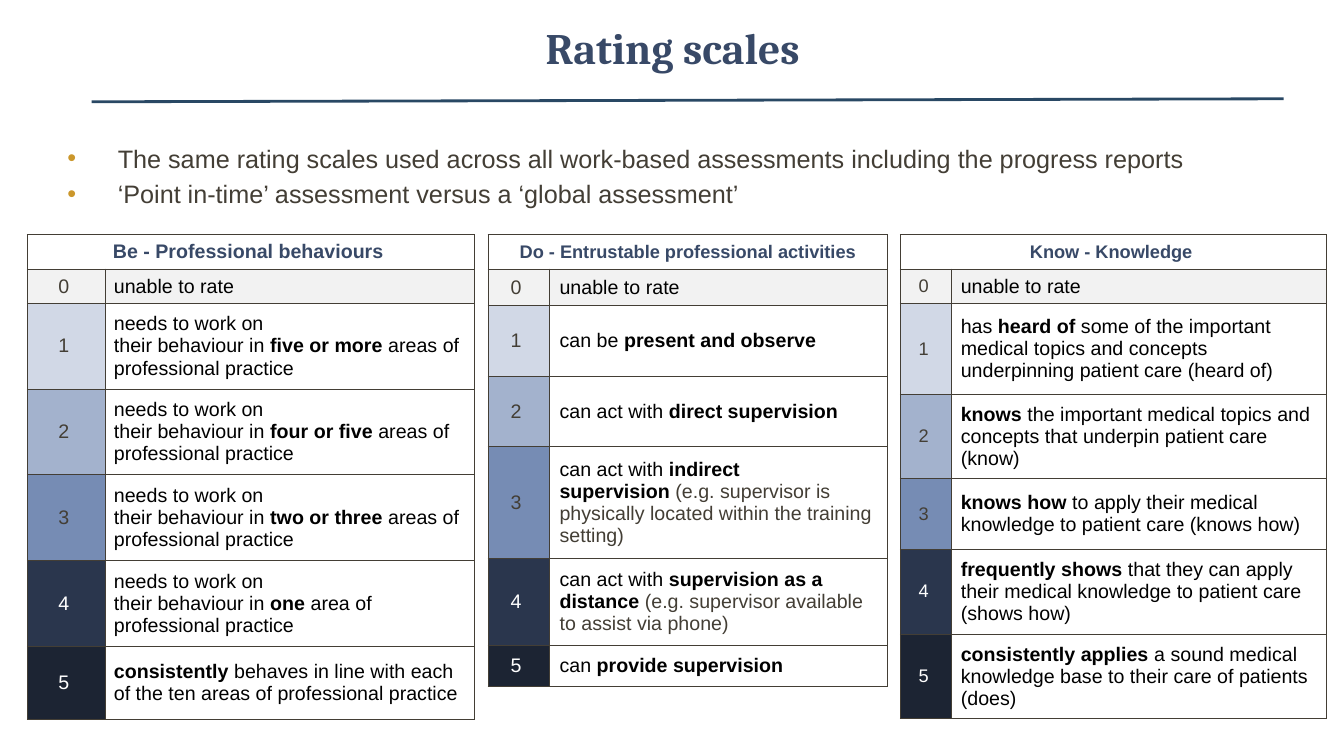
from lxml.etree import SubElement
from pptx import Presentation
from pptx.dml.color import RGBColor
from pptx.enum.shapes import MSO_CONNECTOR
from pptx.enum.text import MSO_ANCHOR, PP_ALIGN
from pptx.oxml.ns import qn
from pptx.util import Inches, Pt

COLORS = {
    "heading": "384967", "rule": "294864", "muted": "433E35", "bullet": "CB972B",
    "black": "000000", "white": "FFFFFF",
}
# Fill of each rating, 0 to 5
RATING_FILLS = ["F2F2F2", "D1D8E6", "A3B2CD", "768CB4", "2A364D", "1C2433"]
NO_BREAK = chr(160)

BULLETS = [
    "The same rating scales used across all work-based assessments including the progress reports",
    "‘Point in-time’ assessment versus a ‘global assessment’",
]

# Descriptions read "lead|bold|tail"; "_" is a no-break space
BEHAVIOUR = "needs to work on their_behaviour_in_|{}_|{} of professional practice_"
SCALES = [
    {
        "heading": "Be - Professional behaviours_", "heading_size": 14, "digit_size": 14,
        "left": 0.27, "columns": [0.78, 3.66], "margins": (0.08, 0.04), "tail": "black",
        "rows": [0.34, 0.34, 0.85, 0.85, 0.85, 0.85, 0.73],
        "ratings": [
            "unable to rate_",
            BEHAVIOUR.format("five_or more", "areas"),
            BEHAVIOUR.format("four_or five", "areas"),
            BEHAVIOUR.format("two_or three", "areas"),
            BEHAVIOUR.format("one", "area"),
            "|consistently_|behaves in line with each of_the ten areas of professional practice_",
        ],
    },
    {
        "heading": "Know - Knowledge_", "heading_size": 13, "digit_size": 13,
        "left": 8.93, "columns": [0.51, 3.72], "margins": (0.09, 0.04), "tail": "black",
        "rows": [0.34, 0.34, 0.9, 0.84, 0.7, 0.84, 0.84],
        "ratings": [
            "unable to rate_",
            "has_|heard of_|some of the important medical topics_and concepts "
            "underpinning patient care (heard of)_",
            "|knows_|the important medical topics and concepts_that underpin patient care (know)_",
            "|knows how_|to apply their medical knowledge to_patient care (knows how)_",
            "|frequently shows|_that they can apply their medical_knowledge to patient care "
            "(shows how)_",
            "|consistently applies|_a sound medical knowledge_base to their care of patients "
            "(does)_",
        ],
    },
    {
        "heading": "Do - Entrustable_professional activities", "heading_size": 13,
        "digit_size": 14,
        "left": 4.84, "columns": [0.61, 3.35], "margins": (0.1, 0.05), "tail": "muted",
        "rows": [0.34, 0.36, 0.7, 0.7, 1.11, 0.86, 0.41],
        "ratings": [
            "unable to rate_",
            "can be_|present and observe_",
            "can act with_|direct supervision_",
            "can act with_|indirect supervision_|(e.g. supervisor is physically located "
            "within the training setting)",
            "can act with|_supervision as a distance_|(e.g. supervisor available to assist "
            "via phone)",
            "can_|provide supervision_",
        ],
    },
]


def add_run(paragraph, text, size=14, color="black", bold=False, font="Arial"):
    run = paragraph.add_run()
    run.text = text.replace("_", NO_BREAK)
    run.font.name = font
    run.font.size = Pt(size)
    run.font.bold = bold
    run.font.color.rgb = RGBColor.from_string(COLORS[color])


def add_text_frame(slide, left, top, width, height, anchor):
    box = slide.shapes.add_textbox(Inches(left), Inches(top), Inches(width), Inches(height))
    box.text_frame.word_wrap = True
    box.text_frame.vertical_anchor = anchor
    return box.text_frame


def add_title(slide, text):
    frame = add_text_frame(slide, 0.67, -0.16, 12, 1.25, MSO_ANCHOR.MIDDLE)
    paragraph = frame.paragraphs[0]
    paragraph.alignment = PP_ALIGN.CENTER
    add_run(paragraph, text, size=31, color="heading", bold=True, font="Cambria")


def add_rule(slide):
    line = slide.shapes.add_connector(
        MSO_CONNECTOR.STRAIGHT, Inches(0.91), Inches(1.01), Inches(12.73), Inches(0.98))
    line.line.color.rgb = RGBColor.from_string(COLORS["rule"])
    line.line.width = Pt(2)
    SubElement(line._element.spPr, qn("a:effectLst"))


def add_bullets(slide, texts):
    frame = add_text_frame(slide, 0.57, 1.37, 12, 0.87, MSO_ANCHOR.TOP)
    for index, text in enumerate(texts):
        paragraph = frame.add_paragraph() if index else frame.paragraphs[0]
        properties = paragraph._p.get_or_add_pPr()
        properties.set("marL", str(Inches(0.5)))
        properties.set("indent", str(-Inches(0.5)))
        color = SubElement(properties, qn("a:buClr"))
        SubElement(color, qn("a:srgbClr"), val=COLORS["bullet"])
        SubElement(properties, qn("a:buFont"), typeface="Arial")
        SubElement(properties, qn("a:buChar"), char="•")
        if index:
            paragraph.space_before = Pt(3.6)
        add_run(paragraph, text, size=18, color="muted")


def format_cell(cell, margins, fill=None, centred=False):
    """Set borders, fill and margins; return the paragraph to write in."""
    properties = cell._tc.get_or_add_tcPr()
    for side in ("a:lnL", "a:lnR", "a:lnT", "a:lnB"):
        border = SubElement(properties, qn(side), w=str(Pt(0.61)))
        SubElement(SubElement(border, qn("a:solidFill")), qn("a:srgbClr"), val=COLORS["muted"])
    if fill:
        cell.fill.solid()
        cell.fill.fore_color.rgb = RGBColor.from_string(fill)
    else:
        cell.fill.background()
    cell.margin_left = cell.margin_right = Inches(margins[0])
    cell.margin_top = cell.margin_bottom = Inches(margins[1])
    cell.vertical_anchor = MSO_ANCHOR.MIDDLE
    paragraph = cell.text_frame.paragraphs[0]
    if centred:
        paragraph.alignment = PP_ALIGN.CENTER
    return paragraph


def add_scale(slide, scale):
    columns, rows, margins = scale["columns"], scale["rows"], scale["margins"]
    table = slide.shapes.add_table(
        len(rows), len(columns), Inches(scale["left"]), Inches(2.33),
        Inches(sum(columns)), Inches(sum(rows))).table
    table.first_row = table.horz_banding = False
    for column, width in zip(table.columns, columns):
        column.width = Inches(width)
    for row, height in zip(table.rows, rows):
        row.height = Inches(height)

    # Heading across both columns
    table.cell(0, 0).merge(table.cell(0, 1))
    heading = format_cell(table.cell(0, 0), margins, COLORS["white"], centred=True)
    format_cell(table.cell(0, 1), margins, COLORS["white"])
    add_run(heading, scale["heading"], scale["heading_size"], "heading", bold=True)

    # One row per rating
    for rating, description in enumerate(scale["ratings"]):
        fill = RATING_FILLS[rating]
        digit = format_cell(table.cell(rating + 1, 0), margins, fill, centred=True)
        add_run(digit, f"{rating}_", scale["digit_size"], "white" if rating > 3 else "muted")
        paragraph = format_cell(table.cell(rating + 1, 1), margins, None if rating else fill)
        for part, text in enumerate(description.split("|")):
            if text:
                color = scale["tail"] if part == 2 else "black"
                add_run(paragraph, text, color=color, bold=part == 1)


def main():
    presentation = Presentation()
    presentation.slide_width = Inches(13.33)
    presentation.slide_height = Inches(7.5)
    slide = presentation.slides.add_slide(presentation.slide_layouts[6])
    add_title(slide, "Rating scales")
    add_bullets(slide, BULLETS)
    add_rule(slide)
    for scale in SCALES:
        add_scale(slide, scale)
    presentation.save("out.pptx")


if __name__ == "__main__":
    main()
